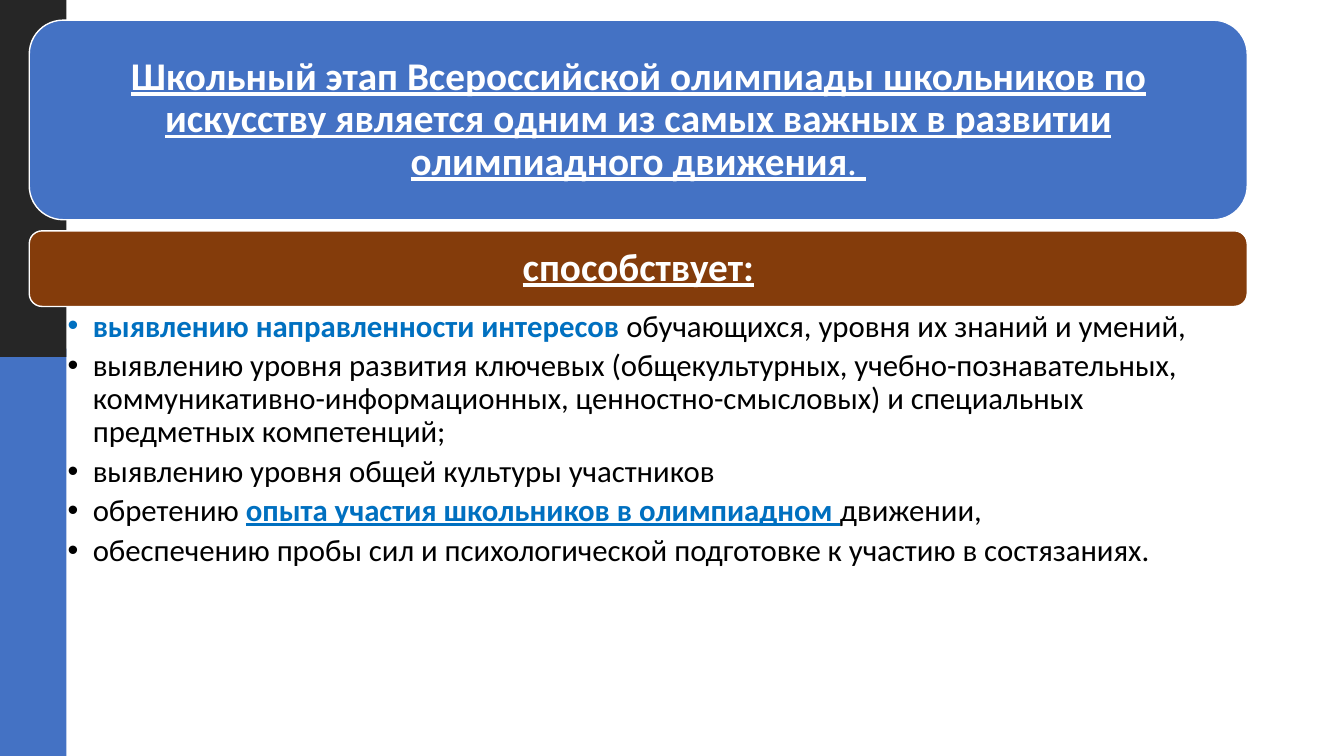
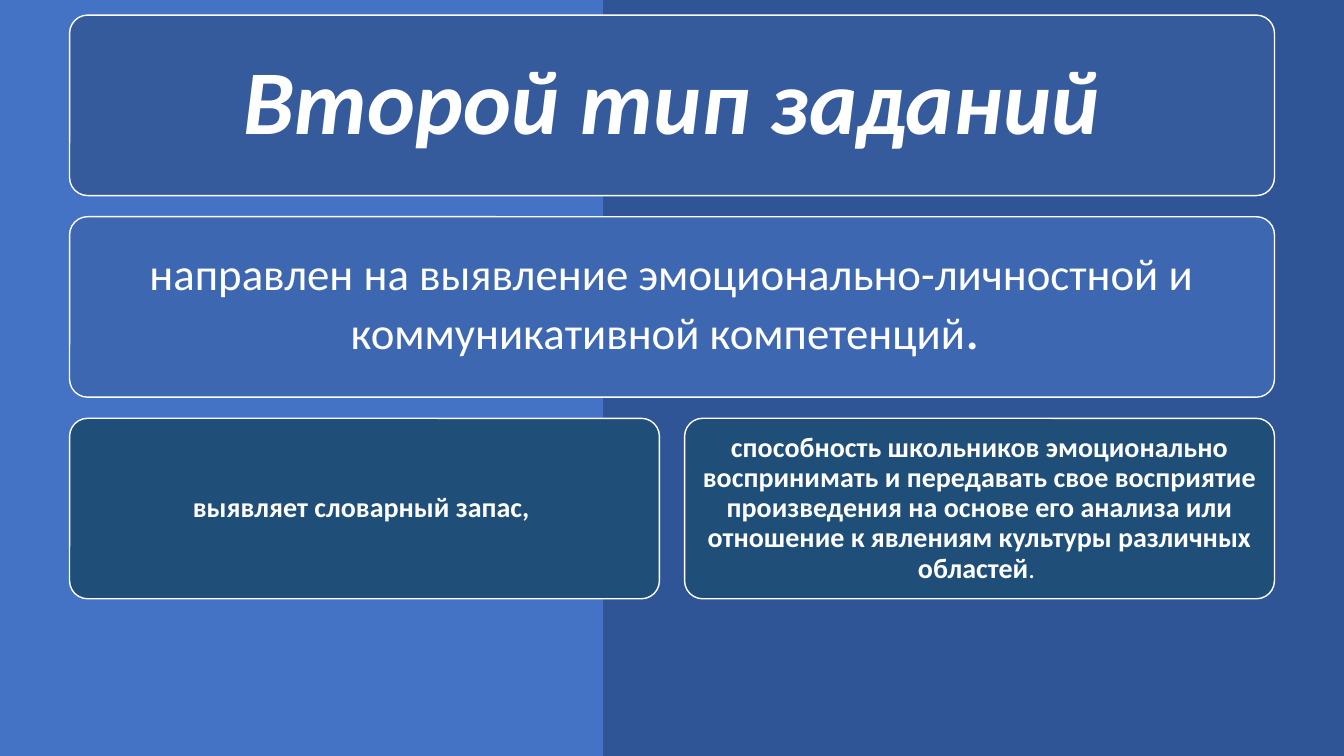
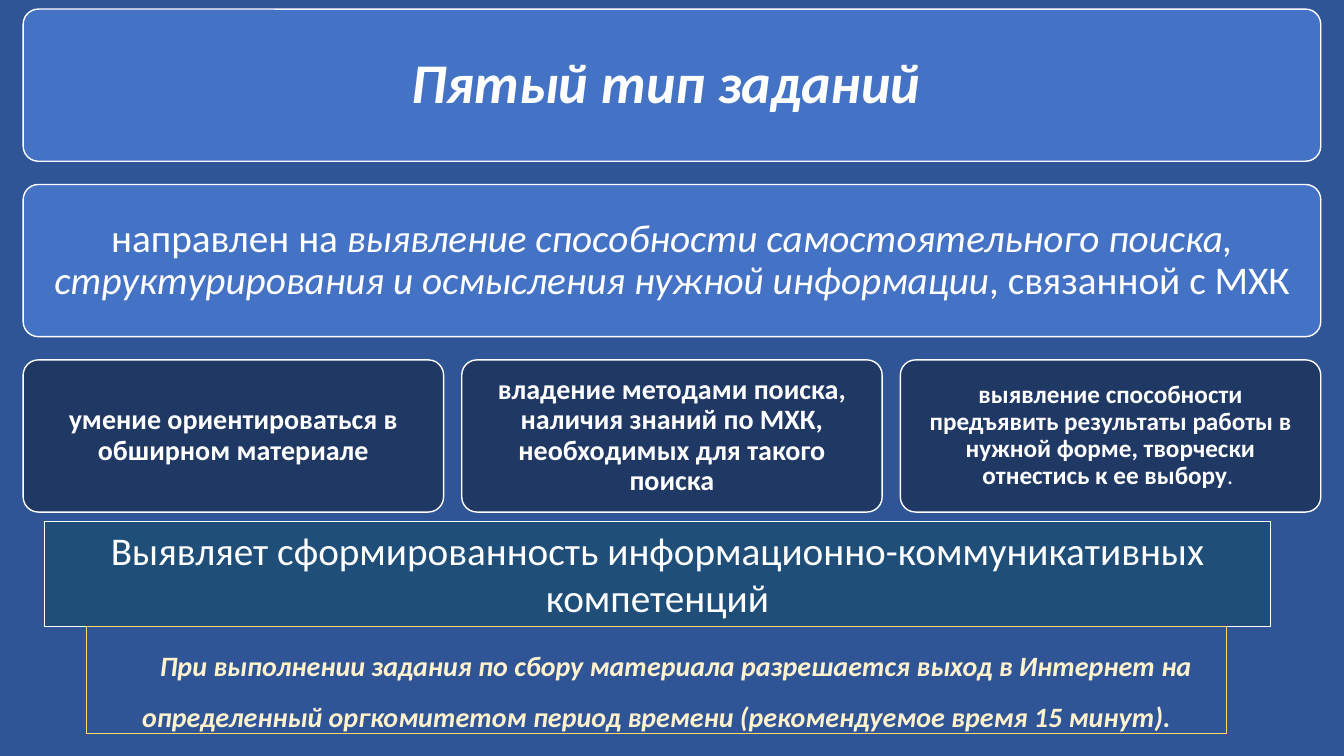
from lxml.etree import SubElement as Sub
from pptx import Presentation as Deck
from pptx.dml.color import RGBColor as RGB
from pptx.enum.shapes import MSO_SHAPE as Form
from pptx.enum.text import MSO_ANCHOR as Anchor, MSO_AUTO_SIZE as Fit, PP_ALIGN as Align
from pptx.oxml.ns import qn
from pptx.util import Inches, Pt

HUES = {
    "white": "FFFFFF",
    "black": "000000",
    "coal": "262626",
    "blue": "4472C4",
    "deep": "2F5597",
    "dusk": "365B9D",
    "mid": "3E67B2",
    "teal": "1F4E79",
    "navy": "203864",
    "brown": "843C0B",
    "azure": "0070C0",
    "gold": "FFD966",
    "cream": "FFF2CC",
}
FONT = "Calibri"
ROUND = 0.1


def hue(name):
    return RGB.from_string(HUES[name])


def place(left, top, width, height):
    return [Inches(n) for n in (left, top, width, height)]


def write(frame, paras, size=20, color="white", bold=False, italic=False, under=False,
          align=Align.CENTER, anchor=Anchor.MIDDLE, pad=(0.1, 0.05, 0.1, 0.05),
          lead=0.9, after=0, left=0, first=0, mark=None):
    frame.word_wrap = True
    frame.auto_size = Fit.NONE
    frame.vertical_anchor = anchor
    sides = [Inches(n) for n in pad]
    frame.margin_left, frame.margin_top, frame.margin_right, frame.margin_bottom = sides
    base = dict(size=size, color=color, bold=bold, italic=italic, under=under)
    for spot, parts in enumerate(paras):
        para = frame.add_paragraph() if spot else frame.paragraphs[0]
        para.alignment = align
        para.line_spacing = lead
        para.space_before = Pt(0)
        para.space_after = Pt(after)
        props = para._p.get_or_add_pPr()
        props.set("marL", str(Inches(left)))
        props.set("indent", str(Inches(first)))
        if mark:
            Sub(props, qn("a:buFont")).set("typeface", "Arial")
            Sub(props, qn("a:buChar")).set("char", mark)
        for text, change in parts:
            style = {**base, **change}
            run = para.add_run()
            run.text = text
            font = run.font
            font.name = FONT
            font.size = Pt(style["size"])
            font.bold = style["bold"]
            font.italic = style["italic"]
            font.underline = style["under"]
            font.color.rgb = hue(style["color"])


def panel(slide, box, fill=None, line=None, weight=1, form=Form.RECTANGLE, curve=None):
    shape = slide.shapes.add_shape(form, *place(*box))
    shape.shadow.inherit = False
    if fill:
        shape.fill.solid()
        shape.fill.fore_color.rgb = hue(fill)
    else:
        shape.fill.background()
    if line:
        shape.line.color.rgb = hue(line)
        shape.line.width = Pt(weight)
    else:
        shape.line.fill.background()
    if curve:
        shape.adjustments[0] = curve
    return shape


def card(slide, box, fill, parts=None, curve=ROUND, pad=0.12, **style):
    shape = panel(slide, box, fill, "white", form=Form.ROUNDED_RECTANGLE, curve=curve)
    if parts:
        write(shape.text_frame, [parts], pad=[pad] * 4, **style)


def header(slide, box, fill, parts, curve=ROUND, pad=0.12, **style):
    card(slide, box, fill, curve=curve)
    title = slide.shapes.title
    title.left, title.top, title.width, title.height = place(*box)
    write(title.text_frame, [parts], pad=[pad + 0.29 * curve * box[3]] * 4, bold=True, **style)
    slide.shapes.element.append(title.element)


def row(slide, box, gap, fill, cells):
    left, top, width, height = box
    wide = (width - gap * (len(cells) - 1)) / len(cells)
    for col, (parts, size) in enumerate(cells):
        spot = (left + col * (wide + gap), top, wide, height)
        card(slide, spot, fill, parts, pad=0.08, size=size, bold=True)


def page(deck, back):
    slide = deck.slides.add_slide(deck.slide_layouts[5])
    slide.background.fill.solid()
    slide.background.fill.fore_color.rgb = hue(back)
    return slide


def goals(deck):
    slide = page(deck, "white")
    panel(slide, (0, 3.46, 0.66, 4.04), "blue")
    panel(slide, (0, 0, 0.66, 3.54), "coal")
    left, width = 0.29, 12.08
    header(slide, (left, 0.2, width, 1.98), "blue", [
        ("Школьный этап Всероссийской олимпиады школьников по искусству является "
         "одним из самых важных в развитии олимпиадного движения", {}),
        (". ", dict(bold=False)),
    ], curve=0.17, size=28, under=True)
    card(slide, (left, 2.29, width, 0.75), "brown", [("способствует:", {})],
         curve=0.17, size=28, bold=True, under=True)
    accent = dict(color="azure", bold=True)
    points = [
        [("выявлению направленности интересов ", accent),
         ("обучающихся, уровня их знаний и умений,", {})],
        [("выявлению уровня развития ключевых (общекультурных, учебно-познавательных, "
          "коммуникативно-информационных, ценностно-смысловых) и специальных "
          "предметных компетенций;", {})],
        [("выявлению уровня общей культуры участников", {})],
        [("обретению ", {}),
         ("опыта участия школьников в олимпиадном ", dict(accent, under=True)),
         ("движении,", {})],
        [("обеспечению пробы сил и психологической подготовке к участию в состязаниях.", {})],
    ]
    text = slide.shapes.add_textbox(*place(left, 3.04, width, 4.03))
    write(text.text_frame, points, size=22, color="black", align=Align.LEFT,
          anchor=Anchor.TOP, pad=(0.38, 0.04, 0.22, 0.04), after=4.4,
          left=0.25, first=-0.25, mark="•")


def second(deck):
    slide = page(deck, "deep")
    panel(slide, (0, 0, 5.98, 7.5), "blue")
    top, mid, low = [(0.69, 0.15 + 2 * n, 11.95, 1.79) for n in range(3)]
    header(slide, top, "dusk", [("Второй тип заданий", {})], pad=0.27, size=65, italic=True)
    card(slide, mid, "mid", [
        ("направлен на выявление эмоционально-личностной и коммуникативной компетенций", {}),
        (". ", dict(size=41)),
    ], pad=0.13, size=32)
    row(slide, low, 0.25, "teal", [
        ([("выявляет словарный запас, ", {})], 20),
        ([("способность школьников эмоционально воспринимать и передавать свое восприятие "
           "произведения на основе его анализа или отношение к явлениям культуры "
           "различных областей", {}),
          (". ", dict(size=19, bold=False))], 20),
    ])


def fifth(deck):
    slide = page(deck, "deep")
    top, mid, low = [(0.23, 0.09 + 1.74 * n, 12.87, 1.51) for n in range(3)]
    header(slide, top, "blue", [("Пятый тип заданий ", {})], pad=0.17, size=40, italic=True)
    card(slide, mid, "blue", [
        ("направлен на ", {}),
        ("выявление способности самостоятельного поиска, структурирования и осмысления "
         "нужной информации", dict(italic=True)),
        (", связанной с МХК", {}),
    ], size=28)
    row(slide, low, 0.18, "navy", [
        ([("умение ориентироваться в обширном материале", {})], 20),
        ([("владение методами поиска, наличия знаний по МХК, необходимых для такого поиска",
           {})], 20),
        ([("выявление способности предъявить результаты работы в нужной форме, "
           "творчески отнестись к ее выбору", {}),
          (". ", dict(size=17, bold=False))], 18),
    ])
    result = panel(slide, (0.44, 5.17, 12.16, 1.05), "teal", "white", 0.75)
    write(result.text_frame, [[
        ("Выявляет сформированность информационно-коммуникативных компетенций", {}),
    ]], size=28, lead=1, anchor=Anchor.TOP)
    note = panel(slide, (0.86, 6.22, 11.31, 1.06), line="gold", weight=0.75)
    write(note.text_frame, [[
        ("При выполнении задания по сбору материала разрешается выход в Интернет на "
         "определенный оргкомитетом период времени (рекомендуемое время 15 минут).", {}),
    ]], color="cream", bold=True, italic=True, lead=1.5, first=0.38, anchor=Anchor.TOP)


def main():
    deck = Deck()
    deck.slide_width, deck.slide_height = Inches(13.33), Inches(7.5)
    goals(deck)
    second(deck)
    fifth(deck)
    deck.save("out.pptx")


if __name__ == "__main__":
    main()
